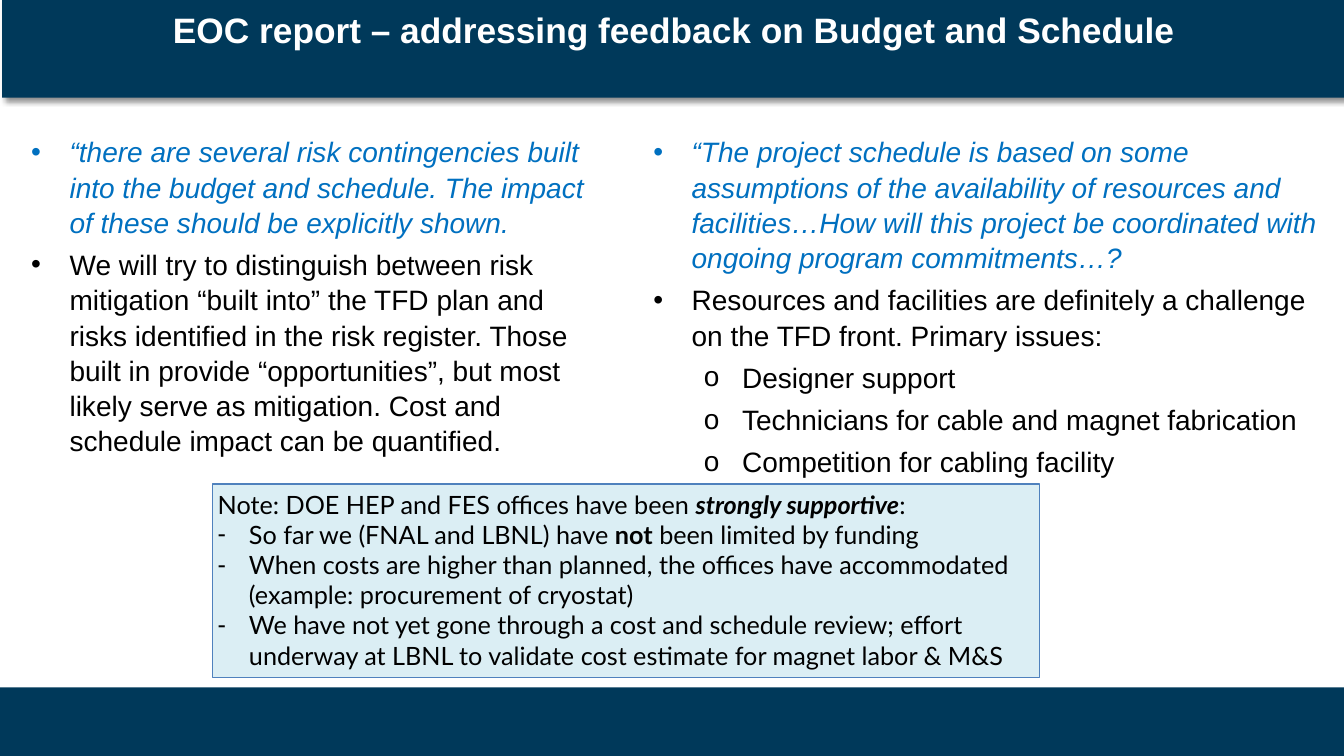
from lxml import etree
from pptx import Presentation
from pptx.dml.color import RGBColor
from pptx.enum import shapes, text
from pptx.oxml import ns
from pptx.util import Pt

PX = 9144  # 100 px to the inch
NAVY = RGBColor(0x00, 0x39, 0x5A)
QUOTE_BLUE = RGBColor(0x00, 0x70, 0xC0)
PALE_BLUE = RGBColor(0xDB, 0xEE, 0xF4)
BORDER_BLUE = RGBColor(0x4F, 0x81, 0xBD)
BLACK = RGBColor(0, 0, 0)
WHITE = RGBColor(255, 255, 255)


def set_bullet(paragraph, char, indent, hanging):
    pPr = paragraph._p.get_or_add_pPr()
    pPr.set("marL", str(indent * PX))
    pPr.set("indent", str(-hanging * PX))
    etree.SubElement(pPr, ns.qn("a:buFont")).set("typeface", "Arial")
    etree.SubElement(pPr, ns.qn("a:buChar")).set("char", char)


def prepare_frame(shape, box, anchor):
    """Place the shape and give its text frame even 5 px margins."""
    shape.left, shape.top, shape.width, shape.height = [n * PX for n in box]
    frame = shape.text_frame
    frame.word_wrap = True
    frame.auto_size = text.MSO_AUTO_SIZE.NONE
    frame.vertical_anchor = anchor
    frame.margin_left = frame.margin_right = 5 * PX
    frame.margin_top = frame.margin_bottom = 5 * PX
    return frame


prs = Presentation()
prs.slide_width, prs.slide_height = 1333 * PX, 750 * PX
slide = prs.slides.add_slide(prs.slide_layouts[3])
title, budget, schedule = slide.placeholders

# Footer band
footer = slide.shapes.add_shape(
    shapes.MSO_SHAPE.RECTANGLE, 0, 682 * PX, 1333 * PX, 68 * PX)
footer.shadow.inherit = False
footer.fill.solid()
footer.fill.fore_color.rgb = NAVY
footer.line.fill.background()

# Title band
title_frame = prepare_frame(title, (2, -3, 1333, 100), text.MSO_ANCHOR.TOP)
title_frame.margin_top = 11 * PX
title_frame.text = "EOC report – addressing feedback on Budget and Schedule"
heading = title_frame.paragraphs[0]
heading.alignment = text.PP_ALIGN.CENTER
heading.font.name = "Arial"
heading.font.size = Pt(25.2)
heading.font.bold = True
heading.font.color.rgb = WHITE
title.fill.solid()
title.fill.fore_color.rgb = NAVY
effects = etree.SubElement(title._element.spPr, ns.qn("a:effectLst"))
shadow = etree.SubElement(effects, ns.qn("a:outerShdw"), blurRad=str(Pt(4)),
                          dist=str(Pt(3)), dir="2700000", rotWithShape="0")
shadow_color = etree.SubElement(shadow, ns.qn("a:srgbClr"), val="000000")
etree.SubElement(shadow_color, ns.qn("a:alpha"), val="43000")

# Feedback columns: a quoted comment, the answer, then any sub-points
columns = [
    (budget, (26, 127, 573, 515), [
        "“there are several risk contingencies built into the budget and schedule. "
        "The impact of these should be explicitly shown.",
        "We will try to distinguish between risk mitigation “built into” the TFD plan "
        "and risks identified in the risk register. Those built in provide "
        "“opportunities”, but most likely serve as mitigation. Cost and schedule "
        "impact can be quantified.",
    ]),
    (schedule, (643, 127, 676, 515), [
        "“The project schedule is based on some assumptions of the availability of "
        "resources and facilities…How will this project be coordinated with ongoing "
        "program commitments…?",
        "Resources and facilities are definitely a challenge on the TFD front. "
        "Primary issues:",
        "Designer support",
        "Technicians for cable and magnet fabrication",
        "Competition for cabling facility",
    ]),
]
for column, box, points in columns:
    frame = prepare_frame(column, box, text.MSO_ANCHOR.TOP)
    frame.text = "\n".join(points)
    for i, point in enumerate(frame.paragraphs):
        point.level = 1 if i > 1 else 0
        point.line_spacing = 1.05
        point.space_before = Pt(5 if i else 0)
        if point.level:
            set_bullet(point, "o", 88, 38)
        else:
            set_bullet(point, "•", 38, 38)
        font = point.runs[0].font
        font.name = "Arial"
        font.size = Pt(20)
        font.italic = i == 0
        font.color.rgb = BLACK if i else QUOTE_BLUE

# Note: each line is a list of (words, bold, italic)
note_lines = [
    [("Note: DOE HEP and FES offices have been ", False, False),
     ("strongly supportive", True, True), (":", False, False)],
    [("So far we (FNAL and LBNL) have ", False, False),
     ("not", True, False), (" been limited by funding", False, False)],
    [("When costs are higher than planned, the offices have accommodated "
      "(example: procurement of cryostat)", False, False)],
    [("We have not yet gone through a cost and schedule review; effort underway "
      "at LBNL to validate cost estimate for magnet labor & M&S", False, False)],
]
note = slide.shapes.add_shape(shapes.MSO_SHAPE.RECTANGLE, 0, 0, PX, PX)
note.shadow.inherit = False
note.fill.solid()
note.fill.fore_color.rgb = PALE_BLUE
note.line.color.rgb = BORDER_BLUE
note.line.width = Pt(1)
note_frame = prepare_frame(note, (211, 480, 820, 192), text.MSO_ANCHOR.TOP)
for i, line in enumerate(note_lines):
    remark = note_frame.add_paragraph() if i else note_frame.paragraphs[0]
    remark.alignment = text.PP_ALIGN.LEFT
    if i:
        set_bullet(remark, "-", 31, 31)
    for words, bold, italic in line:
        run = remark.add_run()
        run.text = words
        run.font.name = "Lato"
        run.font.size = Pt(18)
        run.font.bold = bold
        run.font.italic = italic
        run.font.color.rgb = BLACK

prs.save("out.pptx")
